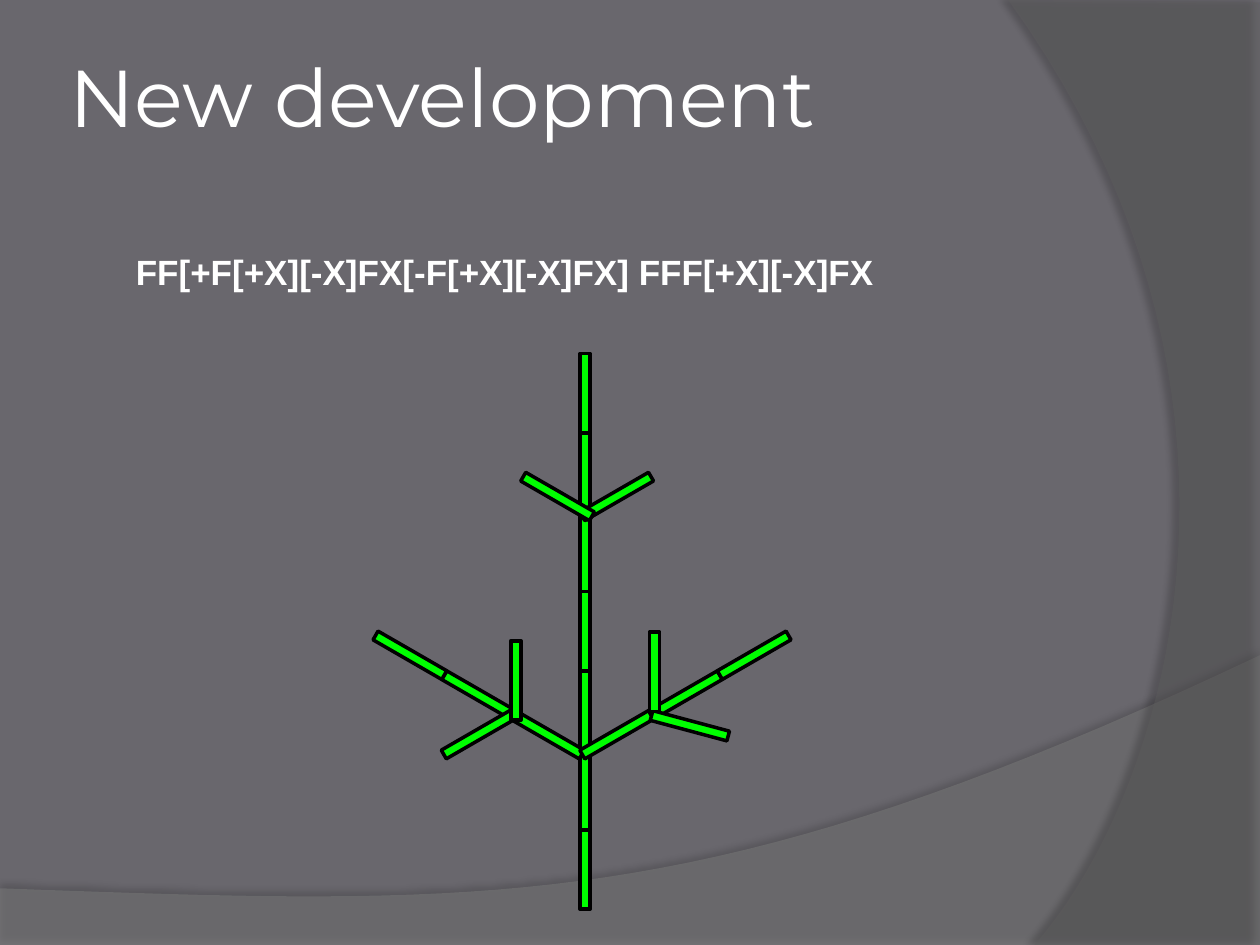
import math

import pptx
import pptx.dml.color
import pptx.enum.shapes
import pptx.enum.text
import pptx.oxml
import pptx.oxml.ns
import pptx.util

Pt = pptx.util.Pt
qn = pptx.oxml.ns.qn
COLORS = {
    "background": "69676D",
    "hill": "7F7F7F",
    "side": "5E5E5E",
    "text": "FFFFFF",
    "stem": "00FF00",
    "outline": "000000",
    "shadow": "000000",
}
SEGMENT, THICKNESS = 45.36, 5.76

# Centre of the first segment, heading in degrees, number of segments
BRANCHES = [
    (334.4, 496.8, 270, 7),
    (312.8, 419.8, 210, 3),
    (273.2, 419.8, 150, 1),
    (294.8, 388.8, 270, 1),
    (352.4, 419.8, 330, 3),
    (394.2, 414.7, 195, 1),
    (374, 383.8, 270, 1),
    (352.4, 283.7, 330, 1),
    (318.6, 283.7, 210, 1),
]


def rgb(name):
    return pptx.dml.color.RGBColor.from_string(COLORS[name])


def bezier(p0, p1, p2, p3, steps=40):
    """Points along a cubic curve, without its start."""
    points = []
    for i in range(1, steps + 1):
        t = i / steps
        u = 1 - t
        weights = (u**3, 3 * u * u * t, 3 * u * t * t, t**3)
        points.append(tuple(sum(w * p[axis] for w, p in zip(weights, (p0, p1, p2, p3)))
                            for axis in (0, 1)))
    return points


def add_backdrop(s, points, color, opacity, shadow_opacity, distance, direction):
    """Translucent outline with a soft shadow; opacities in percent."""
    points = [(Pt(x), Pt(y)) for x, y in points]
    builder = s.shapes.build_freeform(*points[0])
    builder.add_line_segments(points[1:], close=True)
    sp = builder.convert_to_shape()
    sp.fill.solid()
    sp.fill.fore_color.rgb = rgb(color)
    sp.line.fill.background()
    sp.shadow.inherit = False
    spPr = sp._element.spPr
    fill = spPr.find(qn("a:solidFill")).find(qn("a:srgbClr"))
    fill.makeelement(qn("a:alpha"), {})
    alpha = pptx.oxml.parse_xml(
        f'<a:alpha {pptx.oxml.ns.nsdecls("a")} val="{opacity * 1000}"/>')
    fill.append(alpha)
    spPr.find(qn("a:effectLst")).append(pptx.oxml.parse_xml(
        f'<a:outerShdw {pptx.oxml.ns.nsdecls("a")} blurRad="{Pt(4)}" dist="{Pt(distance)}" '
        f'dir="{direction * 60000}" algn="ctr" rotWithShape="0">'
        f'<a:srgbClr val="{COLORS["shadow"]}"><a:alpha val="{shadow_opacity * 1000}"/>'
        '</a:srgbClr></a:outerShdw>'))


def set_text(sp, text, font, size, bold=False):
    tf = sp.text_frame
    tf.word_wrap = True
    p = tf.paragraphs[0]
    p.text = text
    p.alignment = pptx.enum.text.PP_ALIGN.LEFT
    p.font.name = font
    p.font.size = Pt(size)
    p.font.bold = bold
    p.font.color.rgb = rgb("text")
    return tf


def add_title(s, text):
    sp = s.shapes.title
    sp.left, sp.top, sp.width, sp.height = Pt(36), Pt(9.36), Pt(588.24), Pt(90)
    tf = set_text(sp, text, "Montserrat", 46)
    tf.auto_size = pptx.enum.text.MSO_AUTO_SIZE.NONE
    tf.vertical_anchor = pptx.enum.text.MSO_ANCHOR.MIDDLE
    tf.margin_left = tf.margin_right = tf.margin_top = tf.margin_bottom = Pt(3.6)


def add_formula(s, text):
    sp = s.shapes.add_textbox(Pt(70.56), Pt(139.68), Pt(510.48), Pt(31.68))
    tf = set_text(sp, text, "Arial", 20, bold=True)
    tf.auto_size = pptx.enum.text.MSO_AUTO_SIZE.SHAPE_TO_FIT_TEXT


def add_branch(s, x, y, heading, count):
    """Row of equal segments laid end to end along the heading."""
    angle = math.radians(heading)
    for i in range(count):
        cx = x + i * SEGMENT * math.cos(angle)
        cy = y + i * SEGMENT * math.sin(angle)
        sp = s.shapes.add_shape(
            pptx.enum.shapes.MSO_SHAPE.RECTANGLE,
            Pt(cx - SEGMENT / 2), Pt(cy - THICKNESS / 2), Pt(SEGMENT), Pt(THICKNESS))
        sp.rotation = heading
        sp.shadow.inherit = False
        sp.fill.solid()
        sp.fill.fore_color.rgb = rgb("stem")
        sp.line.color.rgb = rgb("outline")
        sp.line.width = Pt(2)


def main():
    prs = pptx.Presentation()
    prs.slide_width, prs.slide_height = Pt(720), Pt(540)
    s = prs.slides.add_slide(prs.slide_layouts[5])
    s.background.fill.solid()
    s.background.fill.fore_color.rgb = rgb("background")

    hill = [(0, 507.6), (0, 540.72), (720, 540.72), (720, 374.4)]
    hill += bezier(hill[-1], (402.48, 524.88), (281.52, 517.68), hill[0])
    add_backdrop(s, hill, "hill", 45, 35, 3.5, 270)
    side = [(720, 1.44), (720, 540), (591.12, 540)]
    side += bezier(side[-1], (673.2, 445.68), (732.96, 216), (576, 0))
    add_backdrop(s, side, "side", 40, 45, 4, 180)

    add_formula(s, "FF[+F[+X][-X]FX[-F[+X][-X]FX] FFF[+X][-X]FX")
    add_title(s, "New development")
    for branch in BRANCHES:
        add_branch(s, *branch)
    prs.save("out.pptx")


if __name__ == "__main__":
    main()
